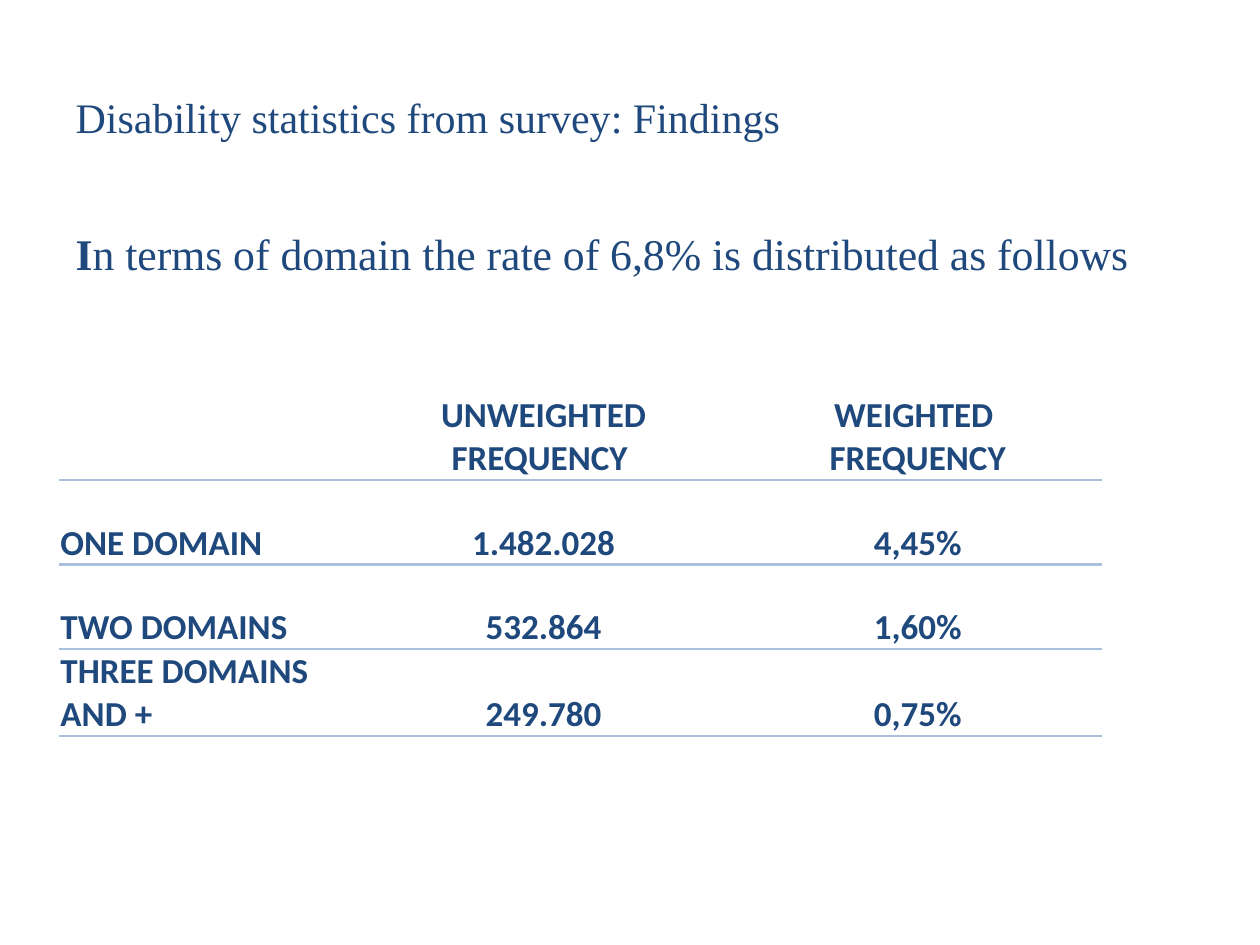
from lxml import etree
from pptx import Presentation
from pptx.dml.color import RGBColor
from pptx.enum.text import MSO_ANCHOR, PP_ALIGN
from pptx.oxml.ns import qn
from pptx.util import Inches, Pt

NAVY = RGBColor(0x1F, 0x49, 0x7D)
RULE_BLUE = RGBColor(0xA8, 0xC0, 0xDE)
LEFT, CENTER = PP_ALIGN.LEFT, PP_ALIGN.CENTER
BOTTOM = MSO_ANCHOR.BOTTOM

COLUMN_WIDTHS = (1.17, 1.17, 3.01, 2.93)
ROW_HEIGHTS = (0.64, 0.67, 0.67, 0.67)
ROWS = (
    ("", "", "UNWEIGHTED FREQUENCY ", "WEIGHTED \nFREQUENCY"),
    ("ONE DOMAIN", "", "1.482.028", "4,45%"),
    ("TWO DOMAINS", "", "532.864", "1,60%"),
    ("THREE DOMAINS AND +", "", "249.780", "0,75%"),
)


class SlideBuilder:
    heading_font = "Times New Roman"
    table_font = "Calibri"
    rule_width = Pt(1.5)

    def __init__(self, slide):
        self.slide = slide

    def format_span(self, span, font, size, bold=False):
        span.font.name = font
        span.font.size = Pt(size)
        span.font.bold = bold
        span.font.color.rgb = NAVY

    def title(self, text):
        para = self.slide.shapes.title.text_frame.paragraphs[0]
        para.text = text
        para.alignment = LEFT
        self.format_span(para.runs[0], self.heading_font, 24)

    def body(self, initial, rest):
        """Write an unbulleted line whose first letter is bold."""
        para = self.slide.placeholders[1].text_frame.paragraphs[0]
        for text, bold in ((initial, True), (rest, False)):
            span = para.add_run()
            span.text = text
            self.format_span(span, self.heading_font, 25, bold)
        properties = para._p.get_or_add_pPr()
        properties.set("marL", str(Inches(0.38)))
        properties.set("indent", str(-Inches(0.38)))
        etree.SubElement(properties, qn("a:buNone"))

    def borders(self, cell, ruled_sides):
        properties = cell._tc.get_or_add_tcPr()
        for side in "LRTB":
            line = etree.SubElement(properties, qn(f"a:ln{side}"))
            if side in ruled_sides:
                line.set("w", str(self.rule_width))
                fill = etree.SubElement(line, qn("a:solidFill"))
                etree.SubElement(fill, qn("a:srgbClr"), val=str(RULE_BLUE))
            else:
                etree.SubElement(line, qn("a:noFill"))

    def cell(self, cell, text, alignment, ruled_sides):
        self.borders(cell, ruled_sides)
        cell.fill.background()
        cell.vertical_anchor = BOTTOM
        cell.margin_left = cell.margin_right = cell.margin_top = Inches(0.01)
        cell.margin_bottom = 0
        if not text:
            return
        cell.text_frame.text = text
        for para in cell.text_frame.paragraphs:
            para.alignment = alignment
            self.format_span(para.runs[0], self.table_font, 20, True)

    def table(self, left, top):
        frame = self.slide.shapes.add_table(
            len(ROWS), len(COLUMN_WIDTHS), Inches(left), Inches(top),
            Inches(sum(COLUMN_WIDTHS)), Inches(sum(ROW_HEIGHTS)))
        table = frame.table
        table.first_row = table.horz_banding = False
        for column, width in zip(table.columns, COLUMN_WIDTHS):
            column.width = Inches(width)
        for row_index, (texts, height) in enumerate(zip(ROWS, ROW_HEIGHTS)):
            table.rows[row_index].height = Inches(height)
            ruled_sides = "TB" if row_index else "B"
            for column_index, text in enumerate(texts):
                alignment = CENTER if column_index else LEFT
                self.cell(table.cell(row_index, column_index), text,
                          alignment, ruled_sides)
            if row_index:
                table.cell(row_index, 0).merge(table.cell(row_index, 1))


def main():
    deck = Presentation()
    deck.slide_width, deck.slide_height = Inches(10), Inches(7.5)
    builder = SlideBuilder(deck.slides.add_slide(deck.slide_layouts[1]))
    builder.title("Disability statistics from survey: Findings")
    builder.body("I", "n terms of domain the rate of 6,8% is distributed as follows")
    builder.table(0.47, 3.12)
    deck.save("out.pptx")


if __name__ == "__main__":
    main()
